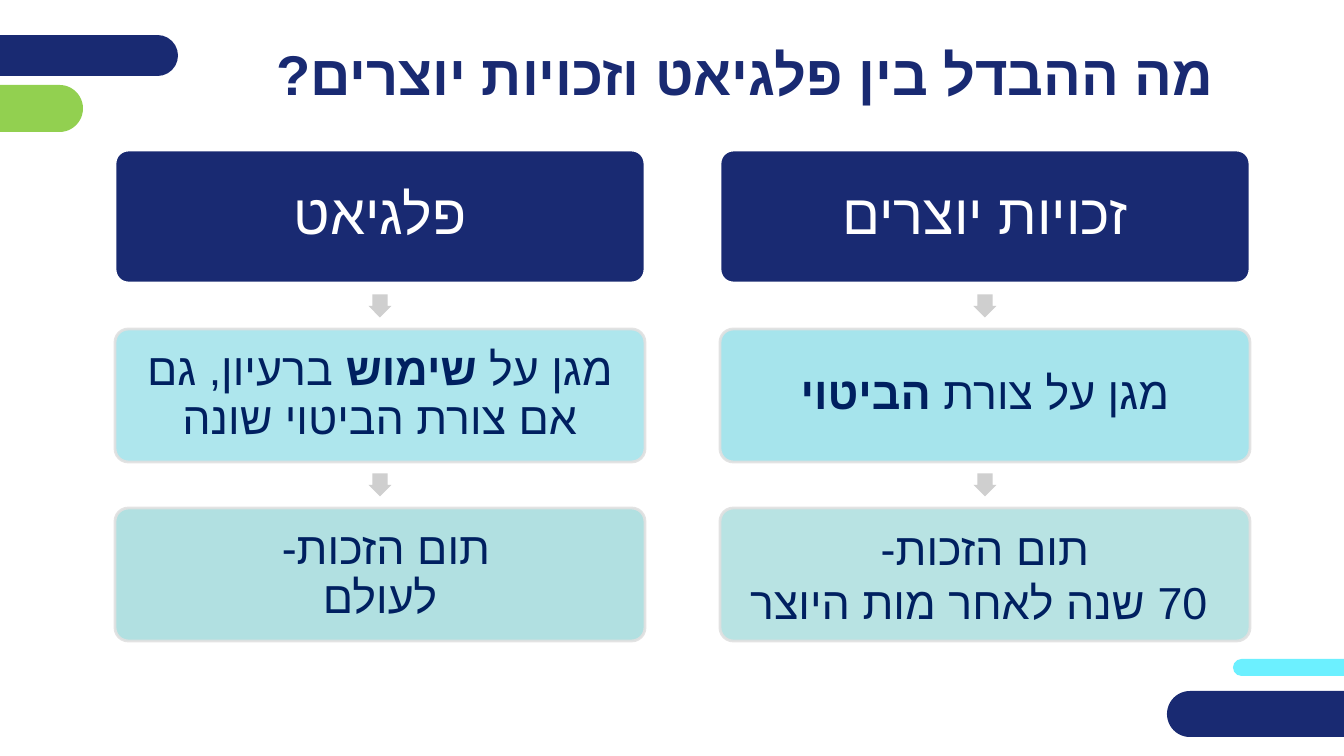
from lxml.etree import SubElement
from pptx import Presentation
from pptx.dml.color import RGBColor
from pptx.enum.shapes import MSO_SHAPE as Kind
from pptx.enum.text import MSO_ANCHOR as Anchor, PP_ALIGN as Align
from pptx.oxml.ns import qn
from pptx.util import Pt

SCALE = 914400 / 100.8
NAVY, INK, SKY, MINT = "192A72", "002060", "A6E4EC", "B1E0E1"
WHITE, EDGE, GREY = "FFFFFF", "E0E0E0", "CFCFCF"
BOX_W, BOX_H, ARROW, TOP, STEP = 530, 133, 23, 150, 179

BARS = [
    (1233, 659, 175, 17, "6CF0FF"),
    (-45, 85, 128, 47, "92D050"),
    (-53, 35, 231, 41, NAVY),
    (1167, 691, 242, 46, NAVY),
]
COLUMNS = [
    (115, "פלגיאט", [
        (["מגן על *שימוש* ברעיון, גם אם צורת הביטוי שונה"], SKY, 90, 0.9),
        (["תום הזכות- \vלעולם"], MINT, 100, 0.9),
    ]),
    (720, "זכויות יוצרים", [
        (["מגן על צורת *הביטוי*"], SKY, 100, 0.9),
        (["תום הזכות-", " 70 שנה לאחר מות היוצר"], MINT, 90, 1),
    ]),
]


def px(n):
    return round(n * SCALE)


def paint(fill, color, alpha=100):
    fill.solid()
    fill.fore_color.rgb = RGBColor.from_string(color)
    if alpha < 100:
        tone = fill._xPr.find(qn("a:solidFill"))[0]
        SubElement(tone, qn("a:alpha"), val=str(alpha * 1000))


def add_form(slide, kind, x, y, w, h, color, alpha=100):
    form = slide.shapes.add_shape(kind, px(x), px(y), px(w), px(h))
    form.shadow.inherit = False
    paint(form.fill, color, alpha)
    form.line.fill.background()
    return form


def style(run, size, color, bold):
    font = run.font
    font.name, font.size, font.bold = "Arial", Pt(size), bold
    paint(font.fill, color)
    SubElement(run._r.get_or_add_rPr(), qn("a:cs"), typeface="Arial")


def write(frame, lines, size, color, bold=False, space=1, pad=4):
    frame.word_wrap = True
    frame.vertical_anchor = Anchor.MIDDLE
    frame.margin_left = frame.margin_right = px(pad)
    frame.margin_top = frame.margin_bottom = px(pad)
    for i, line in enumerate(lines):
        para = frame.add_paragraph() if i else frame.paragraphs[0]
        parts = line.split("*")
        para.text = parts[0]
        for part in parts[1:]:
            para.add_run().text = part
        para.alignment = Align.CENTER
        para.line_spacing = space
        para._p.get_or_add_pPr().set("rtl", "1")
        for j, run in enumerate(para.runs):
            strong = len(parts) > 1 and j % 2 == 1
            style(run, size, color, bold or strong)


def add_title(slide, text):
    title = slide.shapes.title
    title.left, title.top = px(241), px(34)
    title.width, title.height = px(1008), px(78)
    write(title.text_frame, [text], 40, NAVY, bold=True, pad=5)


def add_box(slide, x, y, lines, fill, alpha, edge, size, ink, space, pad):
    box = add_form(slide, Kind.ROUNDED_RECTANGLE, x, y, BOX_W, BOX_H, fill, alpha)
    box.adjustments[0] = 0.1
    paint(box.line.fill, edge, 100 if edge == WHITE else 90)
    box.line.width = Pt(2)
    write(box.text_frame, lines, size, ink, space=space, pad=pad)


def add_column(slide, x, head, cells):
    add_box(slide, x, TOP, [head], NAVY, 100, WHITE, 40, WHITE, 0.9, 6)
    for row, (lines, fill, alpha, space) in enumerate(cells, 1):
        y = TOP + row * STEP
        left = x + (BOX_W - ARROW) / 2
        gap = (STEP - BOX_H - ARROW) / 2
        arrow = add_form(slide, Kind.RIGHT_ARROW, left, y - gap - ARROW,
                         ARROW, ARROW, GREY)
        arrow.rotation = 90
        arrow.adjustments[0] = 0.67
        add_box(slide, x, y, lines, fill, alpha, EDGE, 32, INK, space, 4)


def main():
    deck = Presentation()
    deck.slide_width, deck.slide_height = px(1344), px(756)
    slide = deck.slides.add_slide(deck.slide_layouts[5])
    for x, y, w, h, color in BARS:
        bar = add_form(slide, Kind.ROUNDED_RECTANGLE, x, y, w, h, color)
        bar.adjustments[0] = 0.5
    add_title(slide, "מה ההבדל בין פלגיאט וזכויות יוצרים?")
    for x, head, cells in COLUMNS:
        add_column(slide, x, head, cells)
    deck.save("out.pptx")


if __name__ == "__main__":
    main()
